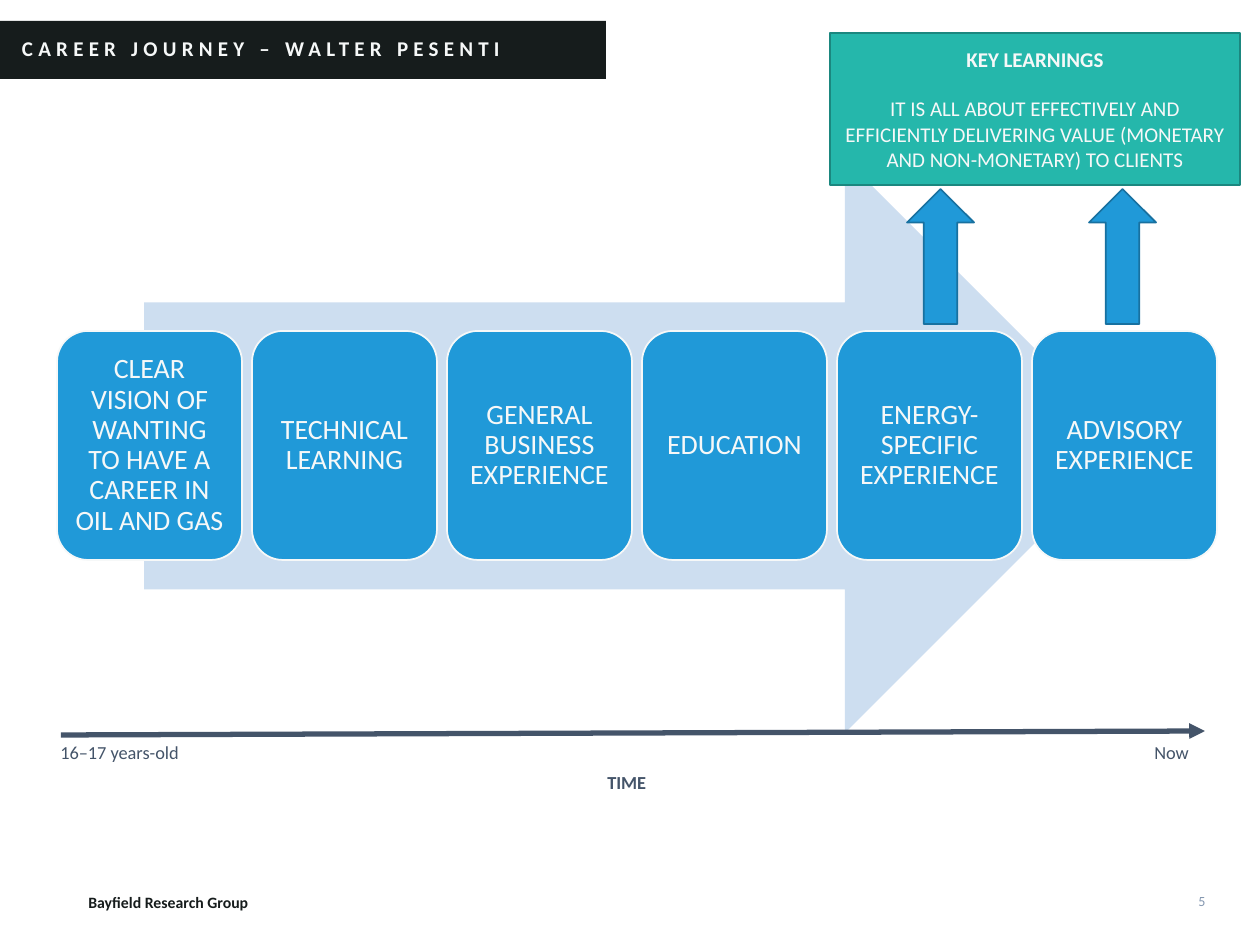
from lxml.etree import SubElement
from pptx import Presentation
from pptx.dml.color import RGBColor
from pptx.enum.shapes import MSO_CONNECTOR, MSO_SHAPE
from pptx.enum.text import MSO_ANCHOR, PP_ALIGN
from pptx.oxml.ns import qn
from pptx.util import Inches, Pt

PX = Inches(1) / 126
DARK, LIGHT, BLUE, SLATE = "161C1C", "F6F8F8", "2099D8", "445469"


def box(left, top, width, height, fill=None, line=None, kind=MSO_SHAPE.RECTANGLE):
    """Add a filled shape, or a text box when there is no fill."""
    place = [round(v * PX) for v in (left, top, width, height)]
    if fill is None:
        return slide.shapes.add_textbox(*place)
    shape = slide.shapes.add_shape(kind, *place)
    shape.shadow.inherit = False
    shape.fill.solid()
    shape.fill.fore_color.rgb = RGBColor.from_string(fill)
    if line:
        shape.line.color.rgb = RGBColor.from_string(line)
        shape.line.width = Pt(1)
    else:
        shape.line.fill.background()
    return shape


def write(shape, text, size, color, bold=False, align=PP_ALIGN.LEFT,
          anchor=MSO_ANCHOR.MIDDLE, wrap=True):
    frame = shape.text_frame
    frame.text = text
    frame.word_wrap = wrap
    frame.vertical_anchor = anchor
    for paragraph in frame.paragraphs:
        paragraph.alignment = align
        for run in paragraph.runs:
            run.font.name = "Calibri"
            run.font.size = Pt(size)
            run.font.bold = bold
            run.font.color.rgb = RGBColor.from_string(color)
    return frame


prs = Presentation()
prs.slide_width, prs.slide_height = Inches(10), Inches(7.5)
slide = prs.slides.add_slide(prs.slide_layouts[5])

# Title bar
title = slide.shapes.title
title.left, title.top, title.width, title.height = [
    round(v * PX) for v in (0, 21, 606, 58)]
title.fill.solid()
title.fill.fore_color.rgb = RGBColor.from_string(DARK)
heading = write(title, "CAREER JOURNEY – WALTER PESENTI", 12, LIGHT, bold=True)
heading.margin_left = round(22 * PX)
heading.paragraphs[0].line_spacing = 0.9
heading.paragraphs[0].runs[0].font._element.set("spc", "300")

# Career stages on a broad arrow
box(144, 159, 988, 574, "CDDEF0", kind=MSO_SHAPE.RIGHT_ARROW)
stages = [
    "CLEAR VISION OF WANTING TO HAVE A CAREER IN OIL AND GAS",
    "TECHNICAL LEARNING",
    "GENERAL BUSINESS EXPERIENCE",
    "EDUCATION",
    "ENERGY-SPECIFIC EXPERIENCE",
    "ADVISORY EXPERIENCE",
]
for i, stage in enumerate(stages):
    card = box(57 + 195 * i, 331, 185, 229, BLUE, LIGHT, MSO_SHAPE.ROUNDED_RECTANGLE)
    label = write(card, stage, 16, LIGHT, align=PP_ALIGN.CENTER)
    label.margin_left = label.margin_right = round(9 * PX)
    label.margin_top = label.margin_bottom = round(9 * PX)
    label.paragraphs[0].line_spacing = 0.9

# Time axis
axis = slide.shapes.add_connector(
    MSO_CONNECTOR.STRAIGHT, *[round(v * PX) for v in (61, 735, 1205, 731)])
axis.line.color.rgb = RGBColor.from_string(SLATE)
axis.line.width = Pt(3)
SubElement(axis.line._get_or_add_ln(), qn("a:tailEnd"), type="triangle")
SubElement(axis._element.spPr, qn("a:effectLst"))
for text, left, top, width, bold in [
    ("16–17 years-old", 48, 735, 146, False),
    ("Now", 1142, 735, 60, False),
    ("TIME", 595, 765, 64, True),
]:
    write(box(left, top, width, 36), text, 10.5, SLATE, bold,
          anchor=MSO_ANCHOR.TOP, wrap=False)

# Key learnings, fed by the last two stages
learnings = write(
    box(830, 33, 410, 152, "25B7AB", "1B877F"),
    "KEY LEARNINGS\nIT IS ALL ABOUT EFFECTIVELY AND EFFICIENTLY DELIVERING VALUE "
    "(MONETARY AND NON-MONETARY) TO CLIENTS",
    12, LIGHT, align=PP_ALIGN.CENTER)
learnings.paragraphs[0].runs[0].font.bold = True
learnings.paragraphs[1].space_before = Pt(14)
for left in (907, 1089):
    box(left, 189, 67, 135, BLUE, "1871A0", MSO_SHAPE.UP_ARROW)

# Footer
write(box(76, 886, 195, 32), "Bayfield Research Group", 9, DARK, bold=True, wrap=False)
write(box(918, 876, 300, 50), "5", 8, "8497B0", align=PP_ALIGN.RIGHT)

prs.save("out.pptx")
